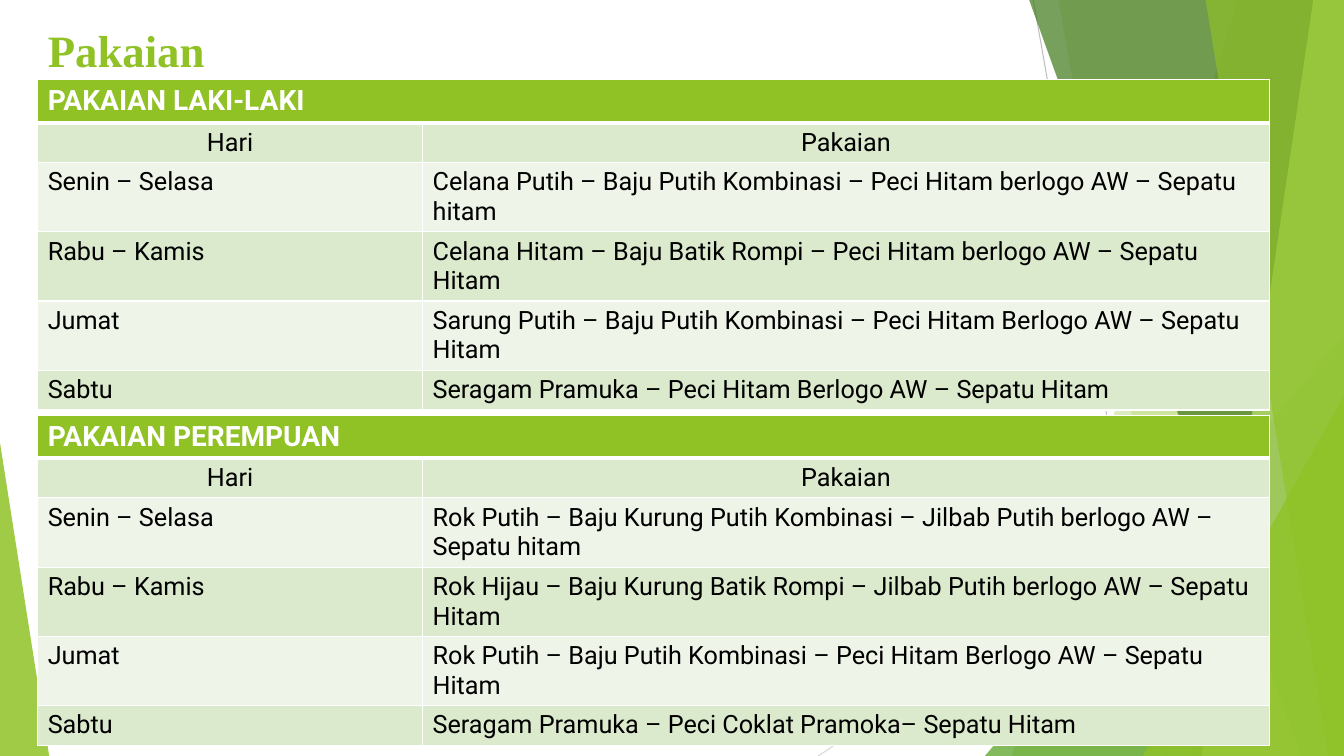
from lxml import etree
from pptx import Presentation
from pptx.dml.color import RGBColor
from pptx.enum.shapes import MSO_CONNECTOR, MSO_SHAPE
from pptx.enum.text import MSO_ANCHOR, PP_ALIGN
from pptx.oxml.ns import qn
from pptx.util import Cm, Pt

STRAIGHT = MSO_CONNECTOR.STRAIGHT
TRIANGLE = MSO_SHAPE.ISOSCELES_TRIANGLE
TOP, MIDDLE = MSO_ANCHOR.TOP, MSO_ANCHOR.MIDDLE
LEFT, CENTER = PP_ALIGN.LEFT, PP_ALIGN.CENTER
WIDTH, HEIGHT = 33.87, 19.05

COLORS = {
    "green": "90C226", "leaf": "54A021", "forest": "3F7819", "lime": "C0E474",
    "band": "DBE9CD", "pale": "EEF4E8", "white": "FFFFFF", "black": "000000",
    "gray": "BFBFBF", "silver": "D9D9D9",
}


def set_borders(cell, widths):
    tcPr = cell._tc.get_or_add_tcPr()
    for i, (side, width) in enumerate(widths.items()):
        ln = etree.Element(qn(f"a:ln{side}"), w=str(Pt(width)))
        fill = etree.SubElement(ln, qn("a:solidFill"))
        etree.SubElement(fill, qn("a:srgbClr"), val=COLORS["white"])
        tcPr.insert(i, ln)


def format_text(p, values):
    p.alignment = values.get("alignment", LEFT)
    for r in p.runs:
        for name in ("name", "size", "bold"):
            setattr(r.font, name, values[name])
        r.font.color.rgb = RGBColor.from_string(COLORS[values["color"]])


prs = Presentation()
prs.slide_width, prs.slide_height = Cm(WIDTH), Cm(HEIGHT)
slide = prs.slides.add_slide(prs.slide_layouts[5])
shapes = slide.shapes

rays = [
    (26.04, 0, 29.41, HEIGHT, "gray"),
    (WIDTH, 10.24, 20.62, HEIGHT, "silver"),
]
for x1, y1, x2, y2, color in rays:
    line = shapes.add_connector(STRAIGHT, Cm(x1), Cm(y1), Cm(x2), Cm(y2))
    line.line.color.rgb = RGBColor.from_string(COLORS[color])
    line.line.width = Pt(0.75)
    etree.SubElement(line._element.spPr, qn("a:effectLst"))

facets = [
    ("blade", (31.19, 25.5), "green", 30),
    ("blade", (26.67, 30.05), "green", 20),
    ("triangle", (24.82, 8.46, 9.05, 10.59, 1), "leaf", 72),
    ("blade", (25.93, 32.79), "forest", 70),
    ("blade", (33.1, 30.28), "lime", 70),
    ("blade", (30.38, 33.48), "green", 65),
    ("triangle", (28.8, 9.98, 5.07, 9.07, 1), "green", 80),
    ("triangle", (0, 11.15, 1.24, 7.9, 0), "green", 85),
]
for kind, geometry, color, opacity in facets:
    if kind == "blade":
        top_x, bottom_x = geometry
        builder = shapes.build_freeform(Cm(top_x), Cm(-0.02))
        corners = [(WIDTH, -0.02), (WIDTH, HEIGHT), (bottom_x, HEIGHT)]
        builder.add_line_segments([(Cm(x), Cm(y)) for x, y in corners])
        sp = builder.convert_to_shape()
    else:
        *box, apex = geometry
        sp = shapes.add_shape(TRIANGLE, *[Cm(v) for v in box])
        sp.adjustments[0] = apex
    sp.shadow.inherit = False
    sp.line.fill.background()
    sp.fill.solid()
    sp.fill.fore_color.rgb = RGBColor.from_string(COLORS[color])
    clr = sp._element.spPr.find(f"{qn('a:solidFill')}/{qn('a:srgbClr')}")
    etree.SubElement(clr, qn("a:alpha"), val=str(opacity * 1000))

title = shapes.title
shapes._spTree.append(title._element)
title.left, title.top, title.width, title.height = Cm(0.95), Cm(0.33), Cm(30.12), Cm(1.2)
tf = title.text_frame
tf.text = "Pakaian"
tf.vertical_anchor = TOP
tf.margin_top = Cm(0.25)
format_text(tf.paragraphs[0], {
    "name": "Times New Roman", "size": Pt(32), "bold": True, "color": "green"})

HEADER = {"name": "Roboto", "size": Pt(20), "bold": True, "color": "white"}
BODY = {"name": "Roboto", "size": Pt(18), "bold": False, "color": "black"}
SUBHEADER = {**BODY, "alignment": CENTER}
DAYS = ["Senin – Selasa", "Rabu – Kamis", "Jumat", "Sabtu"]
COL_WIDTHS = [9.7, 21.34]
ROW_HEIGHTS = [1.08, 1, 1.74, 1.74, 1.74, 1]

outfits = [
    ("PAKAIAN LAKI-LAKI", 2.01, [
        "Celana Putih – Baju Putih Kombinasi – Peci Hitam berlogo AW – Sepatu hitam",
        "Celana Hitam – Baju Batik Rompi – Peci Hitam berlogo AW – Sepatu Hitam",
        "Sarung Putih – Baju Putih Kombinasi – Peci Hitam Berlogo AW – Sepatu Hitam",
        "Seragam Pramuka – Peci Hitam Berlogo AW – Sepatu Hitam",
    ]),
    ("PAKAIAN PEREMPUAN", 10.46, [
        "Rok Putih – Baju Kurung Putih Kombinasi – Jilbab Putih berlogo AW – Sepatu hitam",
        "Rok Hijau – Baju Kurung Batik Rompi – Jilbab Putih berlogo AW – Sepatu Hitam",
        "Rok Putih – Baju Putih Kombinasi – Peci Hitam Berlogo AW – Sepatu Hitam",
        "Seragam Pramuka – Peci Coklat Pramoka– Sepatu Hitam",
    ]),
]
for heading, top, clothes in outfits:
    rows = [(heading, ""), ("Hari", "Pakaian"), *zip(DAYS, clothes)]
    frame = shapes.add_table(len(rows), 2, Cm(0.95), Cm(top),
                             Cm(sum(COL_WIDTHS)), Cm(sum(ROW_HEIGHTS)))
    table = frame.table
    for col, width in zip(table.columns, COL_WIDTHS):
        col.width = Cm(width)
    for i, texts in enumerate(rows):
        table.rows[i].height = Cm(ROW_HEIGHTS[i])
        color = "green" if i == 0 else "band" if i % 2 else "pale"
        style = {0: HEADER, 1: SUBHEADER}.get(i, BODY)
        for j, text in enumerate(texts):
            cell = table.cell(i, j)
            cell.text = text
            cell.vertical_anchor = MIDDLE if i == 1 else TOP
            cell.fill.solid()
            cell.fill.fore_color.rgb = RGBColor.from_string(COLORS[color])
            set_borders(cell, {"L": 1, "R": 1, "T": 3 if i == 1 else 1,
                               "B": 3 if i == 0 else 1})
            format_text(cell.text_frame.paragraphs[0], style)
    table.cell(0, 0).merge(table.cell(0, 1))

prs.save("out.pptx")
